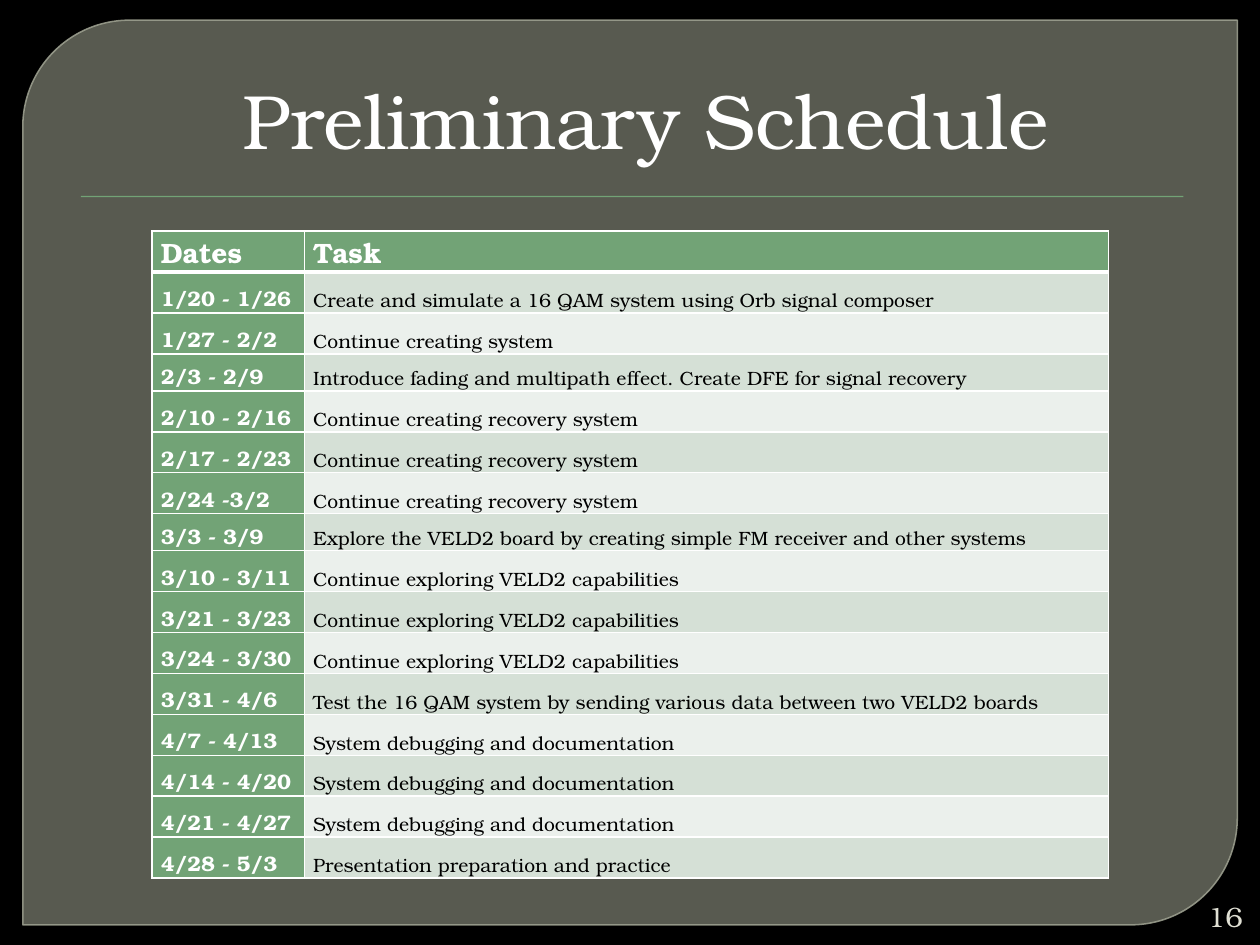
from lxml.etree import SubElement
from pptx import Presentation
from pptx.dml.color import RGBColor
from pptx.enum.shapes import MSO_SHAPE as Shape
from pptx.enum.text import MSO_ANCHOR as Anchor, MSO_AUTO_SIZE as AutoSize, PP_ALIGN as Align
from pptx.oxml.ns import qn
from pptx.util import Pt

FONT = "TeX Gyre Bonum"
BLACK = RGBColor(0x00, 0x00, 0x00)
WHITE = RGBColor(0xFF, 0xFF, 0xFF)
PANEL = RGBColor(0x88, 0x8B, 0x7B)
PANEL_EDGE = RGBColor(0x9D, 0xA0, 0x90)
GREEN = RGBColor(0x72, 0xA3, 0x76)
BANDS = (RGBColor(0xD5, 0xE0, 0xD6), RGBColor(0xEB, 0xF0, 0xEC))
NUMBER_GREY = RGBColor(0xE0, 0xE0, 0xD4)

HEADINGS = ("Dates", "Task")
SCHEDULE = [
    ("1/20 - 1/26", "Create and simulate a 16 QAM system using Orb signal composer"),
    ("1/27 - 2/2", "Continue creating system"),
    ("2/3 - 2/9", "Introduce fading and multipath effect. Create DFE for signal recovery"),
    ("2/10 - 2/16", "Continue creating recovery system"),
    ("2/17 - 2/23", "Continue creating recovery system"),
    ("2/24 -3/2", "Continue creating recovery system"),
    ("3/3 - 3/9", "Explore the VELD2 board by creating simple FM receiver and other systems"),
    ("3/10 - 3/11", "Continue exploring VELD2 capabilities"),
    ("3/21 - 3/23", "Continue exploring VELD2 capabilities"),
    ("3/24 - 3/30", "Continue exploring VELD2 capabilities"),
    ("3/31 - 4/6", "Test the 16 QAM system by sending various data between two VELD2 boards"),
    ("4/7 - 4/13", "System debugging and documentation"),
    ("4/14 - 4/20", "System debugging and documentation"),
    ("4/21 - 4/27", "System debugging and documentation"),
    ("4/28 - 5/3", "Presentation preparation and practice"),
]
ROW_HEIGHT, SHORT_ROW_HEIGHT = 23.4, 21.2
SHORT_ROWS = ("2/3 - 2/9", "3/3 - 3/9")
DATE_WIDTH = 87


def add_run(paragraph, text, size, color, bold=False):
    run = paragraph.add_run()
    run.text = text
    font = run.font
    font.name, font.size, font.bold = FONT, Pt(size), bold
    font.color.rgb = color


def set_alpha(fill, percent):
    """Make a solid fill partly transparent."""
    color = fill._xPr.find(qn("a:solidFill"))[0]
    SubElement(color, qn("a:alpha"), val=str(percent * 1000))


def set_borders(cell, bottom=1):
    """Draw white lines round a cell; bottom is the width of its lower line."""
    properties = cell._tc.get_or_add_tcPr()
    for side, width in (("L", 1), ("R", 1), ("T", 1), ("B", bottom)):
        line = SubElement(properties, qn(f"a:ln{side}"), w=str(Pt(width)))
        fill = SubElement(line, qn("a:solidFill"))
        SubElement(fill, qn("a:srgbClr"), val=str(WHITE))


def fill_cell(cell, text, size, color, fill, bold=False, bottom=1):
    set_borders(cell, bottom)
    cell.fill.solid()
    cell.fill.fore_color.rgb = fill
    cell.vertical_anchor = Anchor.BOTTOM
    cell.margin_left = cell.margin_right = Pt(5)
    cell.margin_top = cell.margin_bottom = 0
    add_run(cell.text_frame.paragraphs[0], text, size, color, bold)


def add_backdrop(slide, left, top, width, height):
    """Place the rounded panel and the thin rule under the title."""
    panel = slide.shapes.add_shape(Shape.ROUND_2_DIAG_RECTANGLE,
                                   Pt(left), Pt(top), Pt(width), Pt(height))
    panel.adjustments[0], panel.adjustments[1] = 0.118, 0
    panel.shadow.inherit = False
    panel.fill.solid()
    panel.fill.fore_color.rgb = PANEL
    set_alpha(panel.fill, 65)
    panel.line.color.rgb = PANEL_EDGE
    panel.line.width = Pt(0.87)
    set_alpha(panel.line.fill, 88)

    rule = slide.shapes.add_shape(Shape.RECTANGLE, Pt(left + 33.2), Pt(top + 100.5),
                                  Pt(width - 64), Pt(0.75))
    rule.shadow.inherit = False
    rule.fill.solid()
    rule.fill.fore_color.rgb = GREEN
    rule.line.fill.background()


def place_title(slide, text, left, top, width, height):
    title = slide.shapes.title
    slide.shapes._spTree.append(title._element)  # in front of the backdrop
    title.left, title.top, title.width, title.height = map(Pt, (left, top, width, height))
    frame = title.text_frame
    frame.auto_size = AutoSize.NONE
    frame.vertical_anchor = Anchor.TOP
    paragraph = frame.paragraphs[0]
    paragraph.alignment = Align.CENTER
    add_run(paragraph, text, 44, WHITE)


def add_schedule(slide, left, top, width):
    heights = [ROW_HEIGHT] + [SHORT_ROW_HEIGHT if dates in SHORT_ROWS else ROW_HEIGHT
                              for dates, _ in SCHEDULE]
    table = slide.shapes.add_table(len(heights), len(HEADINGS), Pt(left), Pt(top),
                                   Pt(width), Pt(sum(heights))).table
    table.horz_banding = False
    table.columns[0].width = Pt(DATE_WIDTH)
    table.columns[1].width = Pt(width - DATE_WIDTH)
    for row, height in zip(table.rows, heights):
        row.height = Pt(height)

    for column, heading in enumerate(HEADINGS):
        fill_cell(table.cell(0, column), heading, 16, WHITE, GREEN, bold=True, bottom=3)
    for index, (dates, task) in enumerate(SCHEDULE):
        fill_cell(table.cell(index + 1, 0), dates, 12, WHITE, GREEN, bold=True)
        fill_cell(table.cell(index + 1, 1), task, 11, BLACK, BANDS[index % 2])


def add_slide_number(slide, number, left, top, width, height):
    frame = slide.shapes.add_textbox(Pt(left), Pt(top), Pt(width), Pt(height)).text_frame
    frame.word_wrap = True
    frame.vertical_anchor = Anchor.MIDDLE
    paragraph = frame.paragraphs[0]
    paragraph.alignment = Align.RIGHT
    add_run(paragraph, number, 16, NUMBER_GREY)


def main():
    deck = Presentation()
    deck.slide_width, deck.slide_height = Pt(720), Pt(540)
    slide = deck.slides.add_slide(deck.slide_layouts[5])
    slide.background.fill.solid()
    slide.background.fill.fore_color.rgb = BLACK
    add_backdrop(slide, 13, 11.5, 694, 517)
    place_title(slide, "Preliminary Schedule", 36, 38, 666, 60.5)
    add_schedule(slide, 87, 132, 546.5)
    add_slide_number(slide, "16", 680.4, 512.6, 36.7, 21.6)
    deck.save("out.pptx")


if __name__ == "__main__":
    main()
